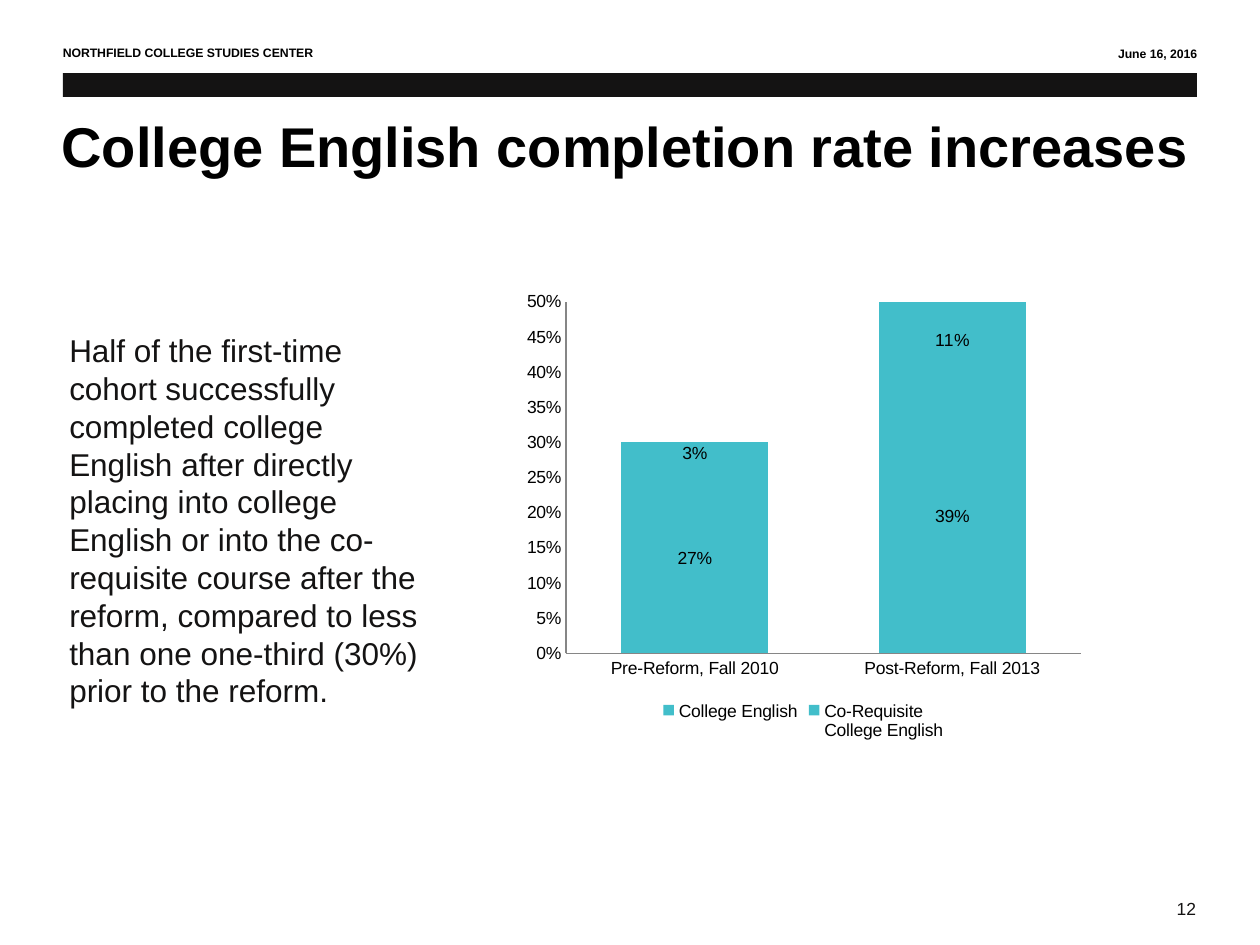
from dataclasses import dataclass

from lxml import etree
from pptx import Presentation
from pptx.chart.data import CategoryChartData
from pptx.dml.color import RGBColor
from pptx.enum.chart import XL_CHART_TYPE, XL_LABEL_POSITION, XL_LEGEND_POSITION, XL_TICK_MARK
from pptx.enum.shapes import MSO_SHAPE
from pptx.enum.text import MSO_ANCHOR, PP_ALIGN
from pptx.oxml.ns import qn
from pptx.util import Inches, Pt


@dataclass(frozen=True)
class Theme:
    font: str = "Arial"
    black: RGBColor = RGBColor(0, 0, 0)
    ink: RGBColor = RGBColor(0x14, 0x13, 0x13)
    teal: RGBColor = RGBColor(0x42, 0xBE, 0xCA)
    axis: RGBColor = RGBColor(0x86, 0x86, 0x86)
    title: float = 32
    body: float = 18
    small: float = 10
    header: float = 7


def apply(target, values):
    for name, value in values.items():
        setattr(target, name, value)


class SlideBuilder:
    """Places elements on a grid of 100 columns by 75 rows."""

    COLUMNS, ROWS = 100, 75

    def __init__(self, presentation, theme):
        self.theme = theme
        self.column = presentation.slide_width / self.COLUMNS
        self.row = presentation.slide_height / self.ROWS
        self.slide = presentation.slides.add_slide(presentation.slide_layouts[6])

    def place(self, left, top, width, height):
        return (round(left * self.column), round(top * self.row),
                round(width * self.column), round(height * self.row))

    def bar(self, area, color):
        shape = self.slide.shapes.add_shape(MSO_SHAPE.RECTANGLE, *self.place(*area))
        shape.shadow.inherit = False
        shape.fill.solid()
        shape.fill.fore_color.rgb = color
        shape.line.fill.background()

    def text(self, area, words, size, color, bold=False, frame=None, paragraph_format=None):
        text_frame = self.slide.shapes.add_textbox(*self.place(*area)).text_frame
        apply(text_frame, {"word_wrap": True, **(frame or {})})
        paragraph = text_frame.paragraphs[0]
        apply(paragraph, paragraph_format or {})
        run = paragraph.add_run()
        run.text = words
        apply(run.font, {"name": self.theme.font, "size": Pt(size), "bold": bold})
        run.font.color.rgb = color

    def stacked_columns(self, area, categories, series, plot_layout):
        data = CategoryChartData(number_format="0%")
        data.categories = categories
        for name, values in series.items():
            data.add_series(name, values)
        chart = self.slide.shapes.add_chart(
            XL_CHART_TYPE.COLUMN_STACKED, *self.place(*area), data).chart
        apply(chart, {"has_title": False, "has_legend": True})
        apply(chart.font, {"name": self.theme.font, "size": Pt(self.theme.small)})
        chart.font.color.rgb = self.theme.black
        apply(chart.legend, {"position": XL_LEGEND_POSITION.BOTTOM, "include_in_layout": False})

        for axis in (chart.category_axis, chart.value_axis):
            apply(axis, {"major_tick_mark": XL_TICK_MARK.NONE,
                         "minor_tick_mark": XL_TICK_MARK.NONE,
                         "has_major_gridlines": False})
            axis.format.line.color.rgb = self.theme.axis
            axis.format.line.width = Pt(0.75)
        apply(chart.value_axis, {"minimum_scale": 0, "maximum_scale": 0.5, "major_unit": 0.05})
        apply(chart.value_axis.tick_labels,
              {"number_format": "0%", "number_format_is_linked": False})

        plot = chart.plots[0]
        apply(plot, {"gap_width": 75, "overlap": 100, "vary_by_categories": False})
        for column_series in plot.series:
            column_series.format.fill.solid()
            column_series.format.fill.fore_color.rgb = self.theme.teal
            apply(column_series.data_labels,
                  {"show_value": True, "number_format": "0%",
                   "number_format_is_linked": False,
                   "position": XL_LABEL_POSITION.CENTER})
        self.set_plot_layout(chart, plot_layout)

    @staticmethod
    def set_plot_layout(chart, shares):
        """Fix the inner plot area, given as shares of the chart's size."""
        plot_area = chart.element.find(".//" + qn("c:plotArea"))
        layout = plot_area.find(qn("c:layout"))
        if layout is None:
            layout = etree.Element(qn("c:layout"))
            plot_area.insert(0, layout)
        manual = etree.SubElement(layout, qn("c:manualLayout"))
        settings = {"layoutTarget": "inner", "xMode": "edge", "yMode": "edge",
                    **dict(zip("xywh", shares))}
        for name, value in settings.items():
            etree.SubElement(manual, qn("c:" + name)).set("val", str(value))


def main():
    theme = Theme()
    presentation = Presentation()
    apply(presentation, {"slide_width": Inches(10), "slide_height": Inches(7.5)})
    builder = SlideBuilder(presentation, theme)

    builder.text((92.4, 70.8, 4.6, 2.7), "12", theme.small, theme.ink)
    builder.bar((5, 5.8, 90, 1.9), theme.ink)
    builder.text((64.2, 3.2, 31.8, 2.2), "June 16, 2016", theme.header, theme.black,
                 bold=True, paragraph_format={"alignment": PP_ALIGN.RIGHT})
    builder.text((4, 3.1, 35.6, 2.2), "NORTHFIELD COLLEGE STUDIES CENTER",
                 theme.header, theme.black, bold=True)
    builder.text((3.9, 4, 93.3, 15), "College English completion rate increases",
                 theme.title, theme.black, bold=True,
                 frame={"vertical_anchor": MSO_ANCHOR.MIDDLE})
    builder.text((3.7, 25.8, 31.3, 36.8),
                 "Half of the first-time cohort successfully completed college English after "
                 "directly placing into college English or into the co-requisite course after "
                 "the reform, compared to less than one one-third (30%) prior to the reform.",
                 theme.body, theme.ink,
                 frame={"margin_left": Inches(0.18)},
                 paragraph_format={"line_spacing": Pt(theme.body * 1.2)})
    builder.stacked_columns(
        (40.8, 22.5, 45.9, 36.7),
        ["Pre-Reform, Fall 2010", "Post-Reform, Fall 2013"],
        {"College English": (0.27, 0.39), "Co-Requisite \nCollege English": (0.03, 0.11)},
        plot_layout=(0.09, 0.04, 0.89, 0.76))

    presentation.save("out.pptx")


if __name__ == "__main__":
    main()
